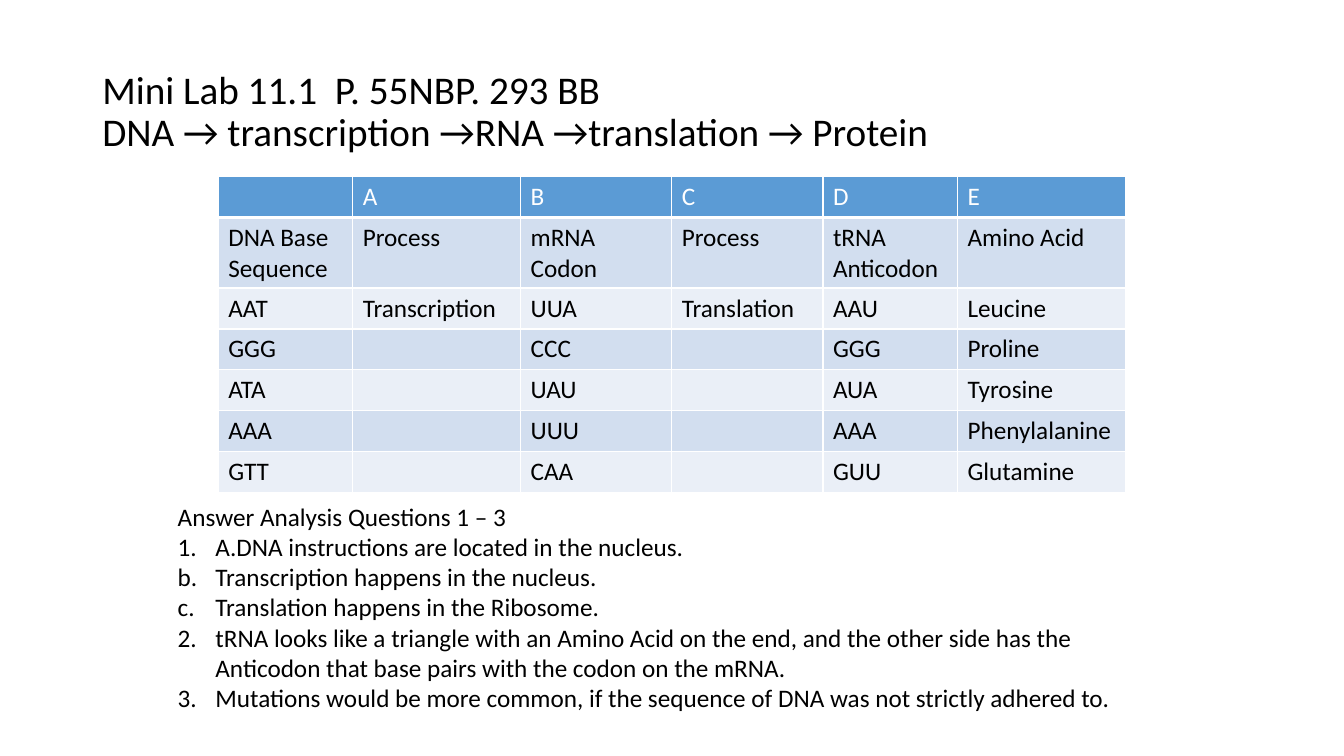
from lxml.etree import SubElement
from pptx import Presentation
from pptx.dml.color import RGBColor
from pptx.enum.text import MSO_ANCHOR as Anchor, MSO_AUTO_SIZE as AutoSize
from pptx.oxml.ns import qn
from pptx.util import Cm, Pt

BLACK = RGBColor(0x00, 0x00, 0x00)
WHITE = RGBColor(0xFF, 0xFF, 0xFF)
BLUE = RGBColor(0x5B, 0x9B, 0xD5)
BAND_DARK = RGBColor(0xD2, 0xDE, 0xEF)
BAND_LIGHT = RGBColor(0xEA, 0xEF, 0xF7)

TITLE = ("Mini Lab 11.1  P. 55NB\tP. 293 BB\v"
         "DNA → transcription →RNA →translation → Protein")
COLUMN_WIDTHS = [3.39, 4.23, 3.81, 3.81, 3.39, 4.23]
CODONS = [
    ["", "A", "B", "C", "D", "E"],
    ["DNA Base Sequence", "Process", "mRNA Codon", "Process",
     "tRNA Anticodon", "Amino Acid"],
    ["AAT", "Transcription", "UUA", "Translation", "AAU", "Leucine"],
    ["GGG", "", "CCC", "", "GGG", "Proline"],
    ["ATA", "", "UAU", "", "AUA", "Tyrosine"],
    ["AAA", "", "UUU", "", "AAA", "Phenylalanine"],
    ["GTT", "", "CAA", "", "GUU", "Glutamine"],
]
ANSWERS = [
    ("Answer Analysis Questions 1 – 3", None, 1),
    ("A.DNA instructions are located in the nucleus.", "arabicPeriod", 1),
    ("Transcription happens in the nucleus.", "alphaLcPeriod", 2),
    ("Translation happens in the Ribosome.", "alphaLcPeriod", 2),
    ("tRNA looks like a triangle with an Amino Acid on the end, and the other "
     "side has the Anticodon that base pairs with the codon on the mRNA.",
     "arabicPeriod", 2),
    ("Mutations would be more common, if the sequence of DNA was not strictly "
     "adhered to.", "arabicPeriod", 2),
]


def write(p, text, size, color=BLACK):
    p.text = text
    for r in p.runs:
        r.font.name = "Calibri"
        r.font.size = Pt(size)
        r.font.bold = False
        r.font.color.rgb = color


def add_text_box(s, left, top, width, height):
    tf = s.shapes.add_textbox(Cm(left), Cm(top), Cm(width), Cm(height)).text_frame
    tf.word_wrap = True
    return tf


def add_title(s):
    tf = add_text_box(s, 2.33, 1.01, 29.21, 3.68)
    tf.vertical_anchor = Anchor.MIDDLE
    p = tf.paragraphs[0]
    p.line_spacing = 0.9
    write(p, TITLE, 28)


def set_borders(cell, bottom):
    tc_pr = cell._tc.get_or_add_tcPr()
    for side, width in (("L", 1), ("R", 1), ("T", 1), ("B", bottom)):
        ln = SubElement(tc_pr, qn(f"a:ln{side}"), w=str(Pt(width)))
        fill = SubElement(ln, qn("a:solidFill"))
        SubElement(fill, qn("a:srgbClr"), val=str(WHITE))


def add_codon_table(s):
    table = s.shapes.add_table(len(CODONS), len(COLUMN_WIDTHS), Cm(5.5), Cm(4.45),
                               Cm(sum(COLUMN_WIDTHS)), Cm(7.21)).table
    for column, width in zip(table.columns, COLUMN_WIDTHS):
        column.width = Cm(width)
    for i, values in enumerate(CODONS):
        table.rows[i].height = Cm(1.03)
        header = i == 0
        band = BAND_DARK if i % 2 else BAND_LIGHT
        for j, value in enumerate(values):
            cell = table.cell(i, j)
            set_borders(cell, 3 if header else 1)
            cell.fill.solid()
            cell.fill.fore_color.rgb = BLUE if header else band
            if value:
                write(cell.text_frame.paragraphs[0], value, 18,
                      WHITE if header else BLACK)


def number(p, scheme, start):
    p_pr = p._p.get_or_add_pPr()
    p_pr.set("marL", str(Cm(0.95)))
    p_pr.set("indent", str(-Cm(0.95)))
    SubElement(p_pr, qn("a:buFont"), typeface="+mj-lt")
    bullet = SubElement(p_pr, qn("a:buAutoNum"), type=scheme)
    if start > 1:
        bullet.set("startAt", str(start))


def add_answers(s):
    tf = add_text_box(s, 4.23, 12.5, 25.4, 5.63)
    tf.auto_size = AutoSize.SHAPE_TO_FIT_TEXT
    for i, (text, scheme, start) in enumerate(ANSWERS):
        p = tf.add_paragraph() if i else tf.paragraphs[0]
        write(p, text, 18)
        if scheme:
            number(p, scheme, start)


def main():
    prs = Presentation()
    prs.slide_width, prs.slide_height = Cm(33.87), Cm(19.05)
    s = prs.slides.add_slide(prs.slide_layouts[6])
    add_title(s)
    add_codon_table(s)
    add_answers(s)
    prs.save("out.pptx")


if __name__ == "__main__":
    main()
